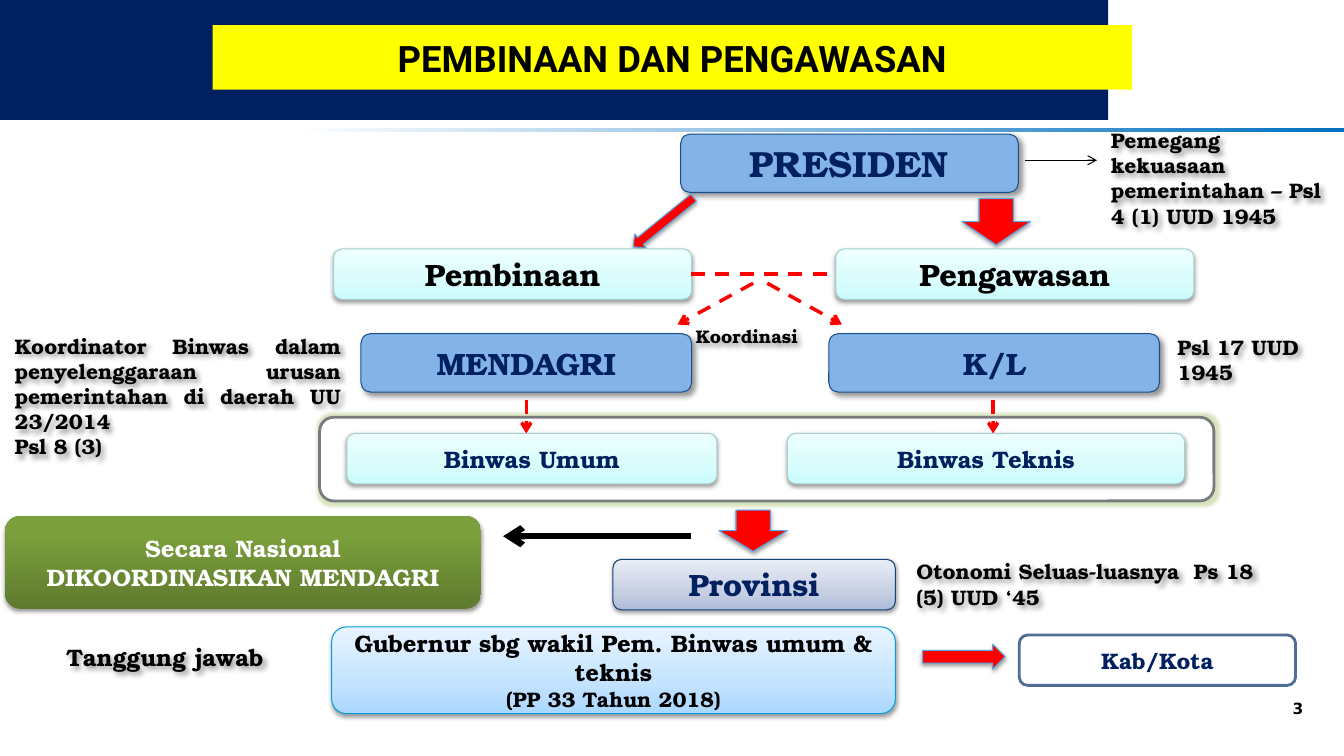
from collections import namedtuple

from lxml.etree import SubElement
from pptx import Presentation
from pptx.dml.color import RGBColor
from pptx.enum.dml import MSO_LINE
from pptx.enum.shapes import MSO_CONNECTOR, MSO_SHAPE as SHAPE
from pptx.enum.text import MSO_ANCHOR, PP_ALIGN as ALIGN
from pptx.oxml.ns import qn
from pptx.util import Inches, Pt

SERIF = "TeX Gyre Bonum"
NAVY = RGBColor(0x00, 0x20, 0x60)
BLACK = RGBColor(0x00, 0x00, 0x00)
WHITE = RGBColor(0xFF, 0xFF, 0xFF)
RED = RGBColor(0xFF, 0x00, 0x00)
YELLOW = RGBColor(0xFF, 0xFF, 0x00)
BLUE = RGBColor(0x84, 0xB3, 0xE7)
BLUE_EDGE = RGBColor(0x19, 0x50, 0x8C)
ARROW_EDGE = RGBColor(0x55, 0xA9, 0xE7)
AQUA_EDGE = RGBColor(0xA7, 0xD1, 0xD1)
STEEL_EDGE = RGBColor(0x14, 0x43, 0x78)
SKY_EDGE = RGBColor(0x03, 0xA0, 0xD9)
FRAME_EDGE = RGBColor(0x79, 0x7B, 0x7E)
CITY_EDGE = RGBColor(0x50, 0x6E, 0x94)
GLOW = RGBColor(0x9B, 0xBB, 0x59)


def stops(*pairs):
    """Return gradient stops as (percent, colour) pairs."""
    return [(percent, RGBColor.from_string(code)) for percent, code in pairs]


AQUA = stops((0, "CAFCFC"), (35, "D9FCFC"), (100, "EFFFFF"))
STEEL = stops((0, "AEBBD9"), (35, "C7CFE3"), (100, "E9EDF5"))
SKY = stops((0, "ABD8FF"), (35, "C3E3FF"), (100, "E8F4FF"))
GREEN = stops((0, "5F7A2E"), (80, "7B9F3C"), (100, "7CA13B"))
RULE = stops((0, "0070C0"), (78, "FFFFFF"), (100, "FFFFFF"))

Shadow = namedtuple("Shadow", "alpha blur distance angle")
SOFT = Shadow(38, 3.1, 1.6, 90)
DIAGONAL = Shadow(40, 4, 3, 45)


class Box(namedtuple("Box", "left top width height")):
    """A rectangle in inches."""

    def inner(self, left, top, width, height):
        """Return a box placed relative to this one."""
        return Box(self.left + left, self.top + top, width, height)

    def lengths(self):
        """Return the four sides as slide lengths."""
        return [Inches(side) for side in self]


def add_colour(parent, color, alpha=100):
    """Append a colour element with its opacity in percent."""
    node = SubElement(parent, qn("a:srgbClr"), val=str(color))
    if alpha < 100:
        SubElement(node, qn("a:alpha"), val=str(alpha * 1000))


def paint(shape, fill, angle=90):
    """Fill a shape with nothing, one colour or gradient stops."""
    if fill is None:
        shape.fill.background()
    elif isinstance(fill, RGBColor):
        shape.fill.solid()
        shape.fill.fore_color.rgb = fill
    else:
        shape.fill.gradient()
        shape.fill.gradient_angle = angle
        stop_list = shape._element.spPr.find(".//" + qn("a:gsLst"))
        stop_list.clear()
        for percent, color in fill:
            add_colour(SubElement(stop_list, qn("a:gs"), pos=str(percent * 1000)), color)


def add_block(page, box, kind, fill=None, edge=None, weight=0.75, shadow=None, angle=90):
    """Add a preset shape with its fill, outline and shadow."""
    shape = page.shapes.add_shape(kind, *box.lengths())
    shape.shadow.inherit = False
    paint(shape, fill, angle)
    if edge is None:
        shape.line.fill.background()
    else:
        shape.line.color.rgb = edge
        shape.line.width = Pt(weight)
    if shadow:
        effects = shape._element.spPr.find(qn("a:effectLst"))
        node = SubElement(effects, qn("a:outerShdw"), blurRad=str(Pt(shadow.blur)),
                          dist=str(Pt(shadow.distance)), dir=str(shadow.angle * 60000),
                          rotWithShape="0")
        add_colour(node, BLACK, shadow.alpha)
    return shape


def write(shape, lines, color, align=ALIGN.CENTER, font=SERIF):
    """Write bold (text, size) lines into a shape."""
    frame = shape.text_frame
    frame.word_wrap = True
    frame.vertical_anchor = MSO_ANCHOR.MIDDLE
    for index, (text, size) in enumerate(lines):
        para = frame.add_paragraph() if index else frame.paragraphs[0]
        para.text = text
        para.alignment = align
        para.font.name = font
        para.font.size = Pt(size)
        para.font.bold = True
        para.font.color.rgb = color


def add_card(page, box, lines, color, fill, edge=None, shadow=SOFT, weight=0.75):
    """Add a rounded card with centred text."""
    write(add_block(page, box, SHAPE.ROUNDED_RECTANGLE, fill, edge, weight, shadow), lines, color)


def add_label(page, box, *lines, align=ALIGN.LEFT):
    """Add shadowed text without a visible box."""
    label = add_block(page, box, SHAPE.ROUNDED_RECTANGLE, shadow=DIAGONAL)
    write(label, lines, BLACK, align)


def add_red_arrow(page, box, kind=SHAPE.DOWN_ARROW, rotation=0):
    """Add a solid red block arrow."""
    add_block(page, box, kind, RED, ARROW_EDGE, shadow=SOFT).rotation = rotation


def add_link(page, box, color=RED, weight=2.5, dashed=True, head=True):
    """Draw a line from the box's origin across its signed extent."""
    left, top, width, height = box
    ends = Box(left, top, left + width, top + height)
    link = page.shapes.add_connector(MSO_CONNECTOR.STRAIGHT, *ends.lengths())
    link.line.color.rgb = color
    link.line.width = Pt(weight)
    if dashed:
        link.line.dash_style = MSO_LINE.DASH
    if head:
        SubElement(link.line._get_or_add_ln(), qn("a:tailEnd"), type="arrow")
    SubElement(link._element.spPr, qn("a:effectLst"))


def draw_header(page, box):
    """Draw the navy band, the fading rule and the yellow title."""
    add_block(page, box.inner(0, 1.27, box.width, 0.04), SHAPE.FLOWCHART_PROCESS, RULE, angle=180)
    add_block(page, box.inner(0, 0, 10.99, 1.19), SHAPE.RECTANGLE, NAVY)
    title = page.shapes.title
    title.left, title.top, title.width, title.height = box.inner(2.11, 0.25, 9.12, 0.64).lengths()
    paint(title, YELLOW)
    write(title, [("PEMBINAAN DAN PENGAWASAN", 26)], BLACK, font="Roboto")
    page.shapes._spTree.append(title._element)


def draw_president(page, box):
    """Draw the president with both duties below."""
    add_card(page, box.inner(3.44, 0.18, 3.35, 0.58), [("PRESIDEN", 26)],
             NAVY, BLUE, BLUE_EDGE, DIAGONAL)
    add_red_arrow(page, box.inner(3.18, 0.67, 0.18, 0.77), rotation=50.9)
    add_red_arrow(page, box.inner(6.23, 0.82, 0.68, 0.46))
    for left, duty in ((0, "Pembinaan"), (4.98, "Pengawasan")):
        add_card(page, box.inner(left, 1.32, 3.55, 0.5), [(duty, 22)], BLACK, AQUA, AQUA_EDGE)
    add_link(page, box.inner(3.54, 1.57, 1.44, 0), head=False)
    add_link(page, box.inner(6.86, 0.44, 0.71, 0), BLACK, 0.75, dashed=False)
    add_label(page, box.inner(7.55, 0, 2.46, 1.23),
              ("Pemegang kekuasaan pemerintahan – Psl 4 (1) UUD 1945", 15))


def draw_ministries(page, box):
    """Draw both ministries with their coordination and legal basis."""
    for start, run in ((7.47, -0.75), (7.61, 0.74)):
        add_link(page, box.inner(start, 0, run, 0.41))
    for left, name in ((3.58, "MENDAGRI"), (8.22, "K/L")):
        add_card(page, box.inner(left, 0.5, 3.28, 0.58), [(name, 22)],
                 NAVY, BLUE, BLUE_EDGE, DIAGONAL)
    add_label(page, box.inner(6.78, 0.31, 2.21, 0.43), ("Koordinasi", 13))
    add_label(page, box.inner(11.54, 0.35, 1.79, 0.82), ("Psl 17 UUD 1945", 15))
    add_label(page, box.inner(-0.02, 0.43, 3.57, 1.38),
              ("Koordinator Binwas dalam penyelenggaraan urusan pemerintahan di daerah UU 23/2014", 15),
              ("Psl 8 (3)", 15), align=ALIGN.JUSTIFY)


def draw_scopes(page, box):
    """Draw the glowing frame around both kinds of supervision."""
    frame = add_block(page, box, SHAPE.ROUNDED_RECTANGLE, WHITE, FRAME_EDGE, 2)
    effects = frame._element.spPr.find(qn("a:effectLst"))
    add_colour(SubElement(effects, qn("a:glow"), rad=str(Pt(5))), GLOW, 40)
    scopes = ((0.27, 3.67, 2.05, "Binwas Umum"), (4.64, 3.94, 6.68, "Binwas Teknis"))
    for left, width, middle, name in scopes:
        add_card(page, box.inner(left, 0.16, width, 0.5), [(name, 17)], NAVY, AQUA, AQUA_EDGE)
        add_link(page, box.inner(middle, -0.17, 0, 0.33))


def draw_province(page, box):
    """Draw the national coordination and the province."""
    add_card(page, box.inner(0.05, 0.06, 4.72, 0.92),
             [("Secara Nasional DIKOORDINASIKAN MENDAGRI", 17)], WHITE, GREEN)
    add_link(page, box.inner(6.85, 0.26, -1.86, 0), BLACK, 4.5, dashed=False)
    add_red_arrow(page, box.inner(7.13, 0, 0.68, 0.41))
    add_card(page, box.inner(6.08, 0.49, 2.8, 0.5), [("Provinsi", 22)], NAVY, STEEL, STEEL_EDGE)
    add_label(page, box.inner(8.97, 0.52, 3.88, 0.43),
              ("Otonomi Seluas-luasnya  Ps 18 (5) UUD ‘45", 15))


def draw_governor(page, box):
    """Draw the governor's duty toward regencies and cities."""
    add_label(page, box.inner(0.54, 0.08, 3.04, 0.43), ("Tanggung jawab", 17))
    add_card(page, box.inner(3.29, 0, 5.59, 0.86),
             [("Gubernur sbg wakil Pem. Binwas umum & teknis", 17), ("(PP 33 Tahun 2018)", 15)],
             BLACK, SKY, SKY_EDGE)
    add_red_arrow(page, box.inner(9.15, 0.17, 0.82, 0.25), SHAPE.RIGHT_ARROW)
    add_card(page, box.inner(10.11, 0.08, 2.74, 0.5), [("Kab/Kota", 16)],
             NAVY, WHITE, CITY_EDGE, None, 2)


def draw_number(page, box):
    """Write the page number."""
    number = page.shapes.add_textbox(*box.lengths())
    write(number, [("3", 11)], BLACK, font="DejaVu Sans")
    number.text_frame.vertical_anchor = MSO_ANCHOR.TOP


def main():
    """Build the slide and save it."""
    deck = Presentation()
    deck.slide_width, deck.slide_height = Inches(13.33), Inches(7.5)
    page = deck.slides.add_slide(deck.slide_layouts[5])
    draw_header(page, Box(0, 0, 13.33, 1.31))
    draw_president(page, Box(3.31, 1.15, 10.02, 1.82))
    draw_ministries(page, Box(0, 2.81, 13.33, 1.81))
    draw_scopes(page, Box(3.17, 4.14, 8.87, 0.83))
    draw_province(page, Box(0, 5.06, 13.33, 0.99))
    draw_governor(page, Box(0, 6.22, 13.33, 0.86))
    draw_number(page, Box(12.61, 6.89, 0.53, 0.39))
    deck.save("out.pptx")


if __name__ == "__main__":
    main()
